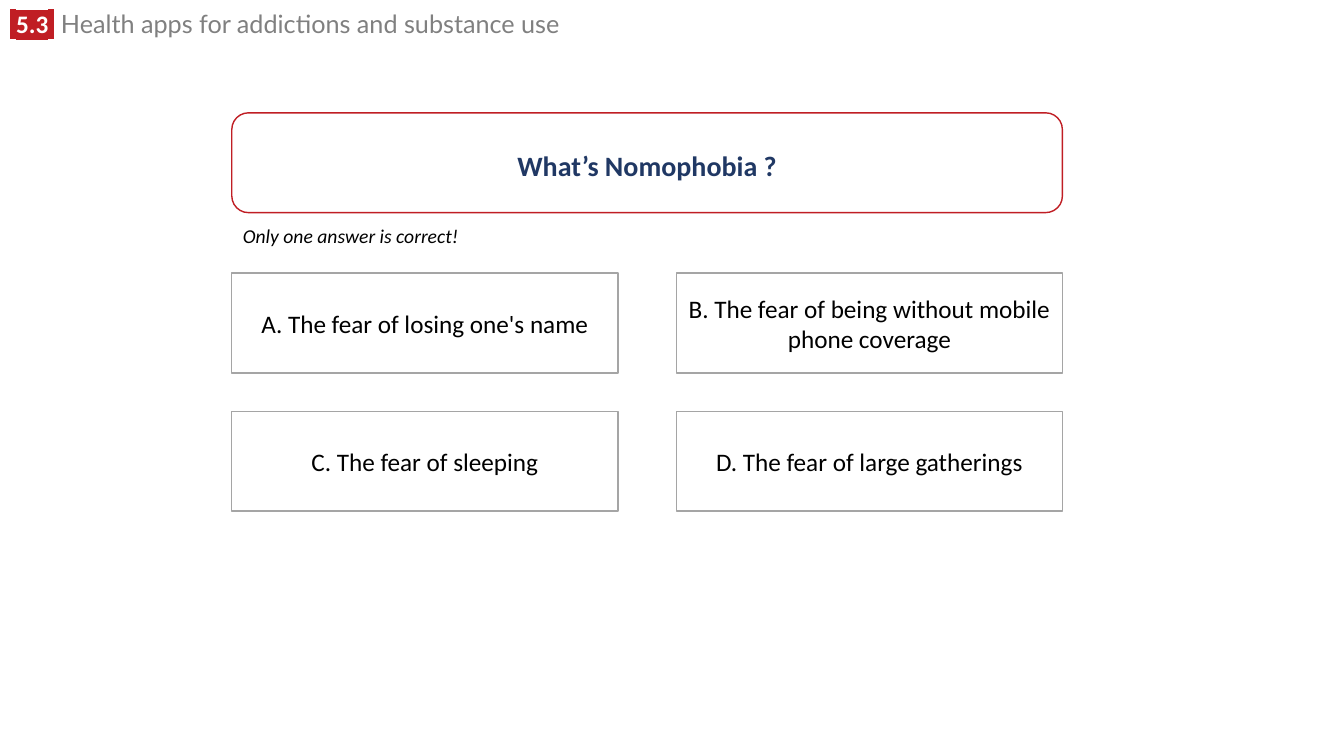
from lxml import etree
from pptx import Presentation
from pptx import util as u
from pptx.dml.color import RGBColor
from pptx.enum import shapes, text
from pptx.oxml.ns import qn

RED = RGBColor(0xC0, 0x1E, 0x24)
NAVY = RGBColor(0x20, 0x38, 0x64)
GREY = RGBColor(0x80, 0x80, 0x80)
BORDER = RGBColor(0xA5, 0xA5, 0xA5)
BLACK = RGBColor(0, 0, 0)
WHITE = RGBColor(0xFF, 0xFF, 0xFF)


def add_run(p, words, color, highlight=None, **fmt):
    r = p.add_run()
    r.text = words
    for name, value in fmt.items():
        setattr(r.font, name, value)
    r.font.color.rgb = color
    if highlight is not None:
        mark = etree.Element(qn("a:highlight"))
        etree.SubElement(mark, qn("a:srgbClr"), val=str(highlight))
        r.font.fill._xPr.find(qn("a:solidFill")).addnext(mark)


def header(s, box, number, title):
    """Section number on a red mark, followed by the section title."""
    sp = s.shapes.title
    sp.left, sp.top, sp.width, sp.height = map(u.Pt, box)
    tf = sp.text_frame
    tf.word_wrap = True
    tf.auto_size = text.MSO_AUTO_SIZE.SHAPE_TO_FIT_TEXT
    tf.vertical_anchor = text.MSO_ANCHOR.TOP
    p = tf.paragraphs[0]
    p.alignment = text.PP_ALIGN.LEFT
    p.line_spacing = 0.8
    p.space_before = u.Pt(0)
    for words, font in ((" ", "Lato"), (number, "Calibri"), (" ", "Lato")):
        add_run(p, words, WHITE, RED, name=font, size=u.Pt(18), bold=True)
    add_run(p, " " + title, GREY, name="Lato", size=u.Pt(18), bold=False)


def card(s, kind, box, words, border, color, spacing=None, **fmt):
    """White outlined box with centred text."""
    sp = s.shapes.add_shape(kind, *map(u.Pt, box))
    sp.shadow.inherit = False
    sp.fill.solid()
    sp.fill.fore_color.rgb = WHITE
    sp.line.color.rgb = border
    sp.line.width = u.Pt(1)
    tf = sp.text_frame
    tf.word_wrap = True
    tf.vertical_anchor = text.MSO_ANCHOR.MIDDLE
    p = tf.paragraphs[0]
    p.alignment = text.PP_ALIGN.CENTER
    p.line_spacing = spacing
    add_run(p, words, color, name="Calibri", **fmt)


def hint(s, box, words):
    tf = s.shapes.add_textbox(*map(u.Pt, box)).text_frame
    tf.word_wrap = False
    tf.auto_size = text.MSO_AUTO_SIZE.SHAPE_TO_FIT_TEXT
    add_run(tf.paragraphs[0], words, BLACK,
            name="Calibri", size=u.Pt(14), italic=True)


def quiz(s, box, question, note, answers):
    """Question across the top, a hint, then answers in two columns."""
    left, top, width, card_h = box
    col_gap, row_gap = 41.8, 27.4
    answer_w = (width - col_gap) / 2
    answers_top = top + 114.5

    # Question
    card(s, shapes.MSO_SHAPE.ROUNDED_RECTANGLE, box, question, RED, NAVY,
         spacing=1.15, size=u.Pt(20), bold=True)

    # Answers
    for i, answer in enumerate(answers):
        row, col = divmod(i, 2)
        place = (left + col * (answer_w + col_gap),
                 answers_top + row * (card_h + row_gap), answer_w, card_h)
        card(s, shapes.MSO_SHAPE.RECTANGLE, place, answer, BORDER, BLACK,
             size=u.Pt(18))

    # Hint
    hint(s, (left + 0.7, top + card_h + 4.3, 170, 24.5), note)


def main():
    prs = Presentation()
    prs.slide_width, prs.slide_height = u.Pt(960), u.Pt(540)
    s = prs.slides.add_slide(prs.slide_layouts[5])
    header(s, (0, 6.5, 685.4, 25.2), "5.3",
           "Health apps for addictions and substance use")
    quiz(s, (165.6, 80.6, 593.3, 71.3), "What’s Nomophobia ?",
         "Only one answer is correct!",
         ["A. The fear of losing one's name",
          "B. The fear of being without mobile phone coverage",
          "C. The fear of sleeping",
          "D. The fear of large gatherings"])
    prs.save("out.pptx")


if __name__ == "__main__":
    main()
